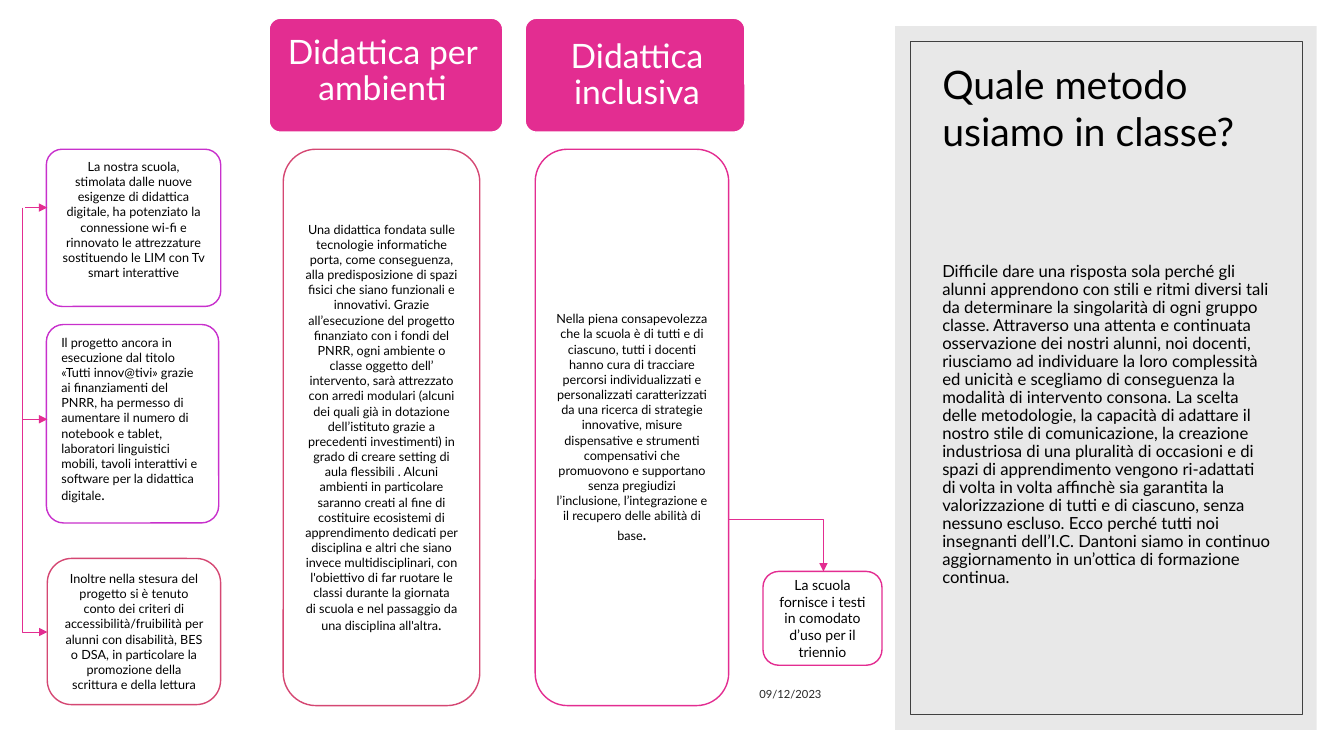
from dataclasses import dataclass
from typing import NamedTuple, Optional

from lxml import etree
from pptx import Presentation
from pptx.dml.color import RGBColor
from pptx.enum import shapes, text
from pptx.oxml.ns import qn
from pptx.util import Pt

BLACK = RGBColor(0x00, 0x00, 0x00)
WHITE = RGBColor(0xFF, 0xFF, 0xFF)
GREY = RGBColor(0xD9, 0xD9, 0xD9)
DARK = RGBColor(0x40, 0x40, 0x40)
DATE = RGBColor(0x26, 0x26, 0x26)
PINK = RGBColor(0xE3, 0x2D, 0x91)
ROSE = RGBColor(0xD5, 0x47, 0x73)
PURPLE = RGBColor(0xC8, 0x30, 0xCC)

FONT = "Lato"
LEFT, CENTER, RIGHT = text.PP_ALIGN.LEFT, text.PP_ALIGN.CENTER, text.PP_ALIGN.RIGHT
TOP, MIDDLE, BOTTOM = text.MSO_ANCHOR.TOP, text.MSO_ANCHOR.MIDDLE, text.MSO_ANCHOR.BOTTOM
RECT, ROUND = shapes.MSO_SHAPE.RECTANGLE, shapes.MSO_SHAPE.ROUNDED_RECTANGLE
STRAIGHT, ELBOW = shapes.MSO_CONNECTOR.STRAIGHT, shapes.MSO_CONNECTOR.ELBOW


class Box(NamedTuple):
    x: float
    y: float
    w: float
    h: float


@dataclass
class Style:
    size: float
    color: RGBColor = BLACK
    align: text.PP_ALIGN = LEFT
    anchor: text.MSO_ANCHOR = TOP
    spacing: float = 1.0
    inset: tuple[float, float] = (7.2, 3.6)


@dataclass
class Card:
    box: Box
    line: RGBColor
    paragraphs: list[str]
    style: Style
    radius: float = 0.1667
    stop_size: Optional[float] = None  # size of a larger closing full stop


@dataclass
class Header:
    box: Box
    label_box: Box
    label: str
    inset: tuple[float, float]


class Arrow(NamedTuple):
    start: tuple[float, float]
    end: tuple[float, float]
    bend: Optional[str] = None


SMALL = Style(9, align=CENTER, anchor=MIDDLE)

HEADERS = [
    Header(Box(192.2, 13, 167, 81.4), Box(192.2, 13, 162, 76.3), "Didattica per ambienti", (6.5, 4.3)),
    Header(Box(375.1, 13, 157, 81.4), Box(385.9, 19.4, 138.2, 69.1), "Didattica inclusiva", (10, 6.5)),
]

CARDS = [
    Card(Box(33.1, 106.6, 124.6, 112.3), PURPLE, [
        "La nostra scuola, stimolata dalle nuove esigenze di didattica digitale, ha potenziato la "
        "connessione wi-fi e rinnovato le attrezzature sostituendo le LIM con Tv smart interattive",
    ], Style(9, align=CENTER), radius=0.1),
    Card(Box(33.1, 231.8, 123.1, 141.8), PURPLE, [
        "Il progetto ancora in esecuzione dal titolo «Tutti innov@tivi» grazie ai finanziamenti del "
        "PNRR, ha permesso di aumentare il numero di notebook e tablet, laboratori linguistici "
        "mobili, tavoli interattivi e software per la didattica digitale",
    ], Style(9), radius=0.1, stop_size=10.5),
    Card(Box(202.3, 106.6, 140.4, 397.4), ROSE, [
        "Una didattica fondata sulle tecnologie informatiche porta, come conseguenza,",
        "alla predisposizione di spazi fisici che siano funzionali e innovativi. Grazie "
        "all’esecuzione del progetto finanziato con i fondi del PNRR, ogni ambiente o classe "
        "oggetto dell’ intervento, sarà attrezzato con arredi modulari (alcuni dei quali già in "
        "dotazione dell’istituto grazie a precedenti investimenti) in grado di creare setting di "
        "aula flessibili . Alcuni ambienti in particolare saranno creati al fine di costituire "
        "ecosistemi di",
        "apprendimento dedicati per disciplina e altri che siano invece multidisciplinari, con "
        "l'obiettivo di far ruotare le classi durante la giornata",
        "di scuola e nel passaggio da una disciplina all'altra",
    ], SMALL, stop_size=10.5),
    Card(Box(382.3, 106.6, 138.2, 397.4), PINK, [
        "Nella piena consapevolezza che la scuola è di tutti e di ciascuno, tutti i docenti hanno "
        "cura di tracciare percorsi individualizzati e personalizzati caratterizzati da una ricerca "
        "di strategie innovative, misure dispensative e strumenti compensativi che promuovono e "
        "supportano senza pregiudizi l’inclusione, l’integrazione e il recupero delle abilità di base",
    ], SMALL, stop_size=12),
    Card(Box(545, 408.2, 85, 67), PINK, [
        "La scuola fornisce i testi in comodato d’uso per il triennio",
    ], Style(10, align=CENTER, anchor=MIDDLE)),
    Card(Box(33.8, 398.9, 123.8, 104.4), ROSE, [
        "Inoltre nella stesura del progetto si è tenuto conto dei criteri di "
        "accessibilità/fruibilità per alunni con disabilità, BES o DSA, in particolare la "
        "promozione della scrittura e della lettura",
    ], SMALL),
]

ARROWS = [
    Arrow((520.6, 333.4), (588.2, 408.2), "bentConnector3"),
    Arrow((15.8, 148.3), (33.8, 451.4), "bentConnector2"),
    Arrow((18, 148.3), (33.8, 148.3)),
    Arrow((15.8, 299.5), (33.8, 299.5)),
]

TITLE = "Quale metodo usiamo in classe?"
BODY = (
    "Difficile dare una risposta sola perché gli alunni apprendono con stili e ritmi diversi tali da "
    "determinare la singolarità di ogni gruppo classe. Attraverso una attenta e continuata osservazione "
    "dei nostri alunni, noi docenti, riusciamo ad individuare la loro complessità ed unicità e scegliamo "
    "di conseguenza la modalità di intervento consona. La scelta delle metodologie, la capacità di "
    "adattare il nostro stile di comunicazione, la creazione industriosa di una pluralità di occasioni e "
    "di spazi di apprendimento vengono ri-adattati di volta in volta affinchè sia garantita la "
    "valorizzazione di tutti e di ciascuno, senza nessuno escluso. Ecco perché tutti noi insegnanti "
    "dell’I.C. Dantoni siamo in continuo aggiornamento in un’ottica di formazione continua."
)


def add_run(p, words: str, size: float, color: RGBColor) -> None:
    r = p.add_run()
    r.text = words
    r.font.name, r.font.size, r.font.color.rgb = FONT, Pt(size), color


def write(sp, paragraphs: list[str], style: Style, stop_size: Optional[float] = None) -> None:
    tf = sp.text_frame
    tf.word_wrap = True
    tf.vertical_anchor = style.anchor
    tf.margin_left = tf.margin_right = Pt(style.inset[0])
    tf.margin_top = tf.margin_bottom = Pt(style.inset[1])
    for i, words in enumerate(paragraphs):
        p = tf.add_paragraph() if i else tf.paragraphs[0]
        p.alignment, p.line_spacing = style.align, style.spacing
        add_run(p, words, style.size, style.color)
    if stop_size:
        add_run(p, ".", stop_size, style.color)


def add_block(parent, kind, box: Box, fill: Optional[RGBColor], line: Optional[RGBColor],
              width: float = 1, radius: Optional[float] = None):
    sp = parent.add_shape(kind, *map(Pt, box))
    sp.shadow.inherit = False
    if fill is None:
        sp.fill.background()
    else:
        sp.fill.solid()
        sp.fill.fore_color.rgb = fill
    if line is None:
        sp.line.fill.background()
    else:
        sp.line.color.rgb, sp.line.width = line, Pt(width)
    if radius is not None:
        sp.adjustments[0] = radius
    return sp


def add_text(parent, box: Box, words: str, style: Style) -> None:
    write(parent.add_textbox(*map(Pt, box)), [words], style)


def add_arrow(s, arrow: Arrow) -> None:
    """Draw an arrow; a bent one is turned so that it leaves its start downwards."""
    (x1, y1), (x2, y2) = arrow.start, arrow.end
    if arrow.bend:
        cx, cy, w, h = (x1 + x2) / 2, (y1 + y2) / 2, y2 - y1, x2 - x1
        x1, y1, x2, y2 = cx + w / 2, cy - h / 2, cx - w / 2, cy + h / 2
    c = s.shapes.add_connector(ELBOW if arrow.bend else STRAIGHT, *map(Pt, (x1, y1, x2, y2)))
    c.line.color.rgb, c.line.width = PINK, Pt(0.5)
    sp_pr = c._element.spPr
    if arrow.bend:
        sp_pr.find(qn("a:xfrm")).set("rot", "16200000")
        sp_pr.find(qn("a:prstGeom")).set("prst", arrow.bend)
    etree.SubElement(c.line._get_or_add_ln(), qn("a:tailEnd"), type="triangle")
    etree.SubElement(sp_pr, qn("a:effectLst"))


def main() -> None:
    prs = Presentation()
    prs.slide_width, prs.slide_height = Pt(960), Pt(540)
    s = prs.slides.add_slide(prs.slide_layouts[6])

    panel = add_block(s.shapes, RECT, Box(639.4, 18.7, 301, 502.6), GREY, None)
    etree.SubElement(panel._element.spPr.find(".//" + qn("a:srgbClr")), qn("a:alpha"), val="60000")
    add_block(s.shapes, RECT, Box(650.2, 29.5, 280.1, 481), None, DARK, 0.5)
    add_text(s.shapes, Box(666, 47.5, 249.1, 66.2), TITLE, Style(28, anchor=BOTTOM))
    add_text(s.shapes, Box(666, 184.3, 249.1, 283.7), BODY, Style(11.9, spacing=0.9))
    add_text(s.shapes, Box(439.9, 475.2, 154.1, 28.8), "09/12/2023",
             Style(8, DATE, RIGHT, BOTTOM))

    for header in HEADERS:
        group = s.shapes.add_group_shape().shapes
        add_block(group, ROUND, header.box, PINK, WHITE, radius=0.1)
        add_text(group, header.label_box, header.label,
                 Style(24, WHITE, CENTER, MIDDLE, 0.9, header.inset))
    for card in CARDS:
        sp = add_block(s.shapes, ROUND, card.box, WHITE, card.line, radius=card.radius)
        write(sp, card.paragraphs, card.style, card.stop_size)
    for arrow in ARROWS:
        add_arrow(s, arrow)

    prs.save("out.pptx")


if __name__ == "__main__":
    main()
